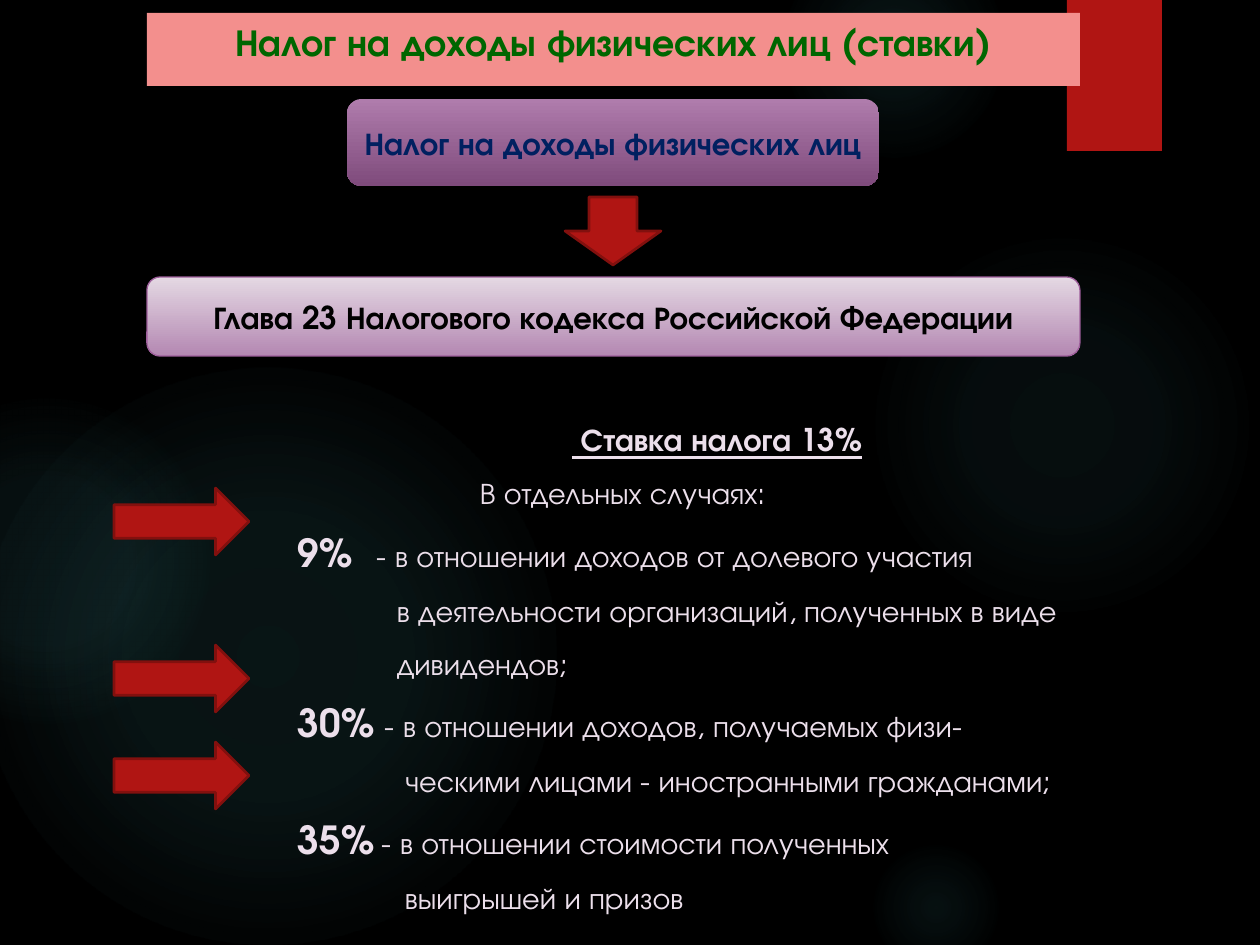
"""Build the slide on personal income tax rates."""
from dataclasses import dataclass
from typing import Optional

import lxml.etree
import pptx
import pptx.dml.color
import pptx.enum.shapes
import pptx.enum.text
import pptx.oxml.ns
import pptx.util

RGB = pptx.dml.color.RGBColor
SHAPE = pptx.enum.shapes.MSO_SHAPE
ANCHOR = pptx.enum.text.MSO_ANCHOR
qn = pptx.oxml.ns.qn

FONT = "TeX Gyre Adventor"
BLACK = RGB(0x00, 0x00, 0x00)
RED = RGB(0xB0, 0x15, 0x13)
DARK_RED = RGB(0x82, 0x10, 0x0E)
PINK = RGB(0xF3, 0x8F, 0x8D)
GREEN = RGB(0x00, 0x66, 0x00)
NAVY = RGB(0x00, 0x20, 0x60)
TEAL = RGB(0x50, 0xB9, 0xC1)
PALE = RGB(0xEC, 0xDF, 0xEB)
PLUM = RGB(0x9E, 0x5E, 0x9B)
TAX_GRADIENT = (RGB(0xAF, 0x7C, 0xAC), RGB(0x7F, 0x4B, 0x7C))
CODE_GRADIENT = (RGB(0xE4, 0xD8, 0xE3), RGB(0xB4, 0x88, 0xB2))


@dataclass
class Box:
    left: int
    top: int
    width: int
    height: int


@dataclass
class Glow:
    left: int
    top: int
    size: int
    stops: tuple


@dataclass
class Line:
    text: str
    margin: int = 0
    rate: str = ""
    tab: Optional[int] = None


GLOWS = (
    Glow(868, 231, 388, ((0, 7), (36, 6), (69, 0))),
    Glow(784, -63, 220, ((0, 14), (36, 7), (73, 0))),
    Glow(868, 840, 136, ((0, 9), (36, 5), (66, 0))),
    Glow(-21, 368, 577, ((0, 11), (36, 10), (75, 0))),
    Glow(-116, 399, 325, ((0, 8), (36, 8), (72, 0))),
)
LINES = (
    Line("В отдельных случаях:", 182),
    Line("- в отношении доходов от долевого участия", rate="9%", tab=79),
    Line("в деятельности организаций, полученных в виде", 99),
    Line("дивидендов;", 99),
    Line("- в отношении доходов, получаемых физи-", rate="30%", tab=87),
    Line("ческими лицами - иностранными гражданами;", 107),
    Line("- в отношении стоимости полученных", rate="35%", tab=84),
    Line("выигрышей и призов", 107),
)
ARROW_TOPS = (488, 645, 742)


def px(length: int) -> pptx.util.Emu:
    """Turn px into EMU."""
    return pptx.util.Emu(round(length * 914400 / 126))


def add_shape(page, kind, box: Box, fill: Optional[RGB] = None,
              line: Optional[RGB] = None, weight: float = 1.5):
    """Add a preset shape without a shadow."""
    shape = page.shapes.add_shape(
        kind, px(box.left), px(box.top), px(box.width), px(box.height))
    shape.shadow.inherit = False
    if fill is not None:
        shape.fill.solid()
        shape.fill.fore_color.rgb = fill
    if line is None:
        shape.line.fill.background()
    else:
        shape.line.color.rgb = line
        shape.line.width = pptx.util.Pt(weight)
    return shape


def add_glow(page, glow: Glow) -> None:
    """Add a circle that fades out from its centre."""
    shape = add_shape(page, SHAPE.OVAL, Box(glow.left, glow.top, glow.size, glow.size))
    gradient = lxml.etree.Element(qn("a:gradFill"), rotWithShape="1")
    stop_list = lxml.etree.SubElement(gradient, qn("a:gsLst"))
    for position, opacity in glow.stops:
        stop = lxml.etree.SubElement(stop_list, qn("a:gs"), pos=str(position * 1000))
        color = lxml.etree.SubElement(stop, qn("a:srgbClr"), val=str(TEAL))
        lxml.etree.SubElement(color, qn("a:alpha"), val=str(opacity * 1000))
    circle = lxml.etree.SubElement(gradient, qn("a:path"), path="circle")
    lxml.etree.SubElement(circle, qn("a:fillToRect"), l="50000", t="50000", r="50000", b="50000")
    shape.element.spPr.find(qn("a:prstGeom")).addnext(gradient)


def fill_gradient(shape, colors: tuple) -> None:
    """Fill a shape from its top colour to its bottom colour."""
    shape.fill.gradient()
    shape.fill.gradient_angle = 270
    for stop, color in zip(shape.fill.gradient_stops, colors):
        stop.color.rgb = color


def set_font(font, size: float, color: RGB, bold: bool = False) -> None:
    """Set typeface, size, colour and weight."""
    font.name = FONT
    font.size = pptx.util.Pt(size)
    font.color.rgb = color
    font.bold = bold


def set_label(shape, text: str, size: float, color: RGB, anchor=ANCHOR.MIDDLE) -> None:
    """Write a centred bold label into a shape."""
    shape.text_frame.word_wrap = True
    shape.text_frame.vertical_anchor = anchor
    para = shape.text_frame.paragraphs[0]
    para.text = text
    para.alignment = pptx.enum.text.PP_ALIGN.CENTER
    set_font(para.font, size, color, bold=True)


def write_line(para, line: Line) -> None:
    """Write one line, with its rate before a tab if it has one."""
    para.space_before = pptx.util.Pt(10)
    set_font(para.font, 17, PALE)
    properties = para._p.get_or_add_pPr()
    properties.set("marL", str(px(line.margin)))
    if line.rate:
        tabs = lxml.etree.Element(qn("a:tabLst"))
        lxml.etree.SubElement(tabs, qn("a:tab"), pos=str(px(line.tab)), algn="l")
        properties.find(qn("a:defRPr")).addprevious(tabs)
        span = para.add_run()
        span.text = line.rate
        set_font(span.font, 22.1, PALE, bold=True)
    span = para.add_run()
    span.text = "\t" + line.text if line.rate else line.text
    set_font(span.font, 17, PALE)


def add_rates(page, box: Box) -> None:
    """Add the heading and the list of tax rates."""
    frame = page.shapes.add_textbox(
        px(box.left), px(box.top), px(box.width), px(box.height)).text_frame
    frame.word_wrap = True
    frame.margin_left = frame.margin_right = frame.margin_top = frame.margin_bottom = 0
    heading = frame.paragraphs[0]
    heading.text = " Ставка налога 13%"
    set_font(heading.font, 17.9, PALE, bold=True)
    heading.font.underline = True
    heading._p.get_or_add_pPr().set("marL", str(px(274)))
    for line in LINES:
        write_line(frame.add_paragraph(), line)


def main() -> None:
    """Build and save the deck."""
    deck = pptx.Presentation()
    deck.slide_width, deck.slide_height = px(1260), px(945)
    page = deck.slides.add_slide(deck.slide_layouts[6])
    page.background.fill.solid()
    page.background.fill.fore_color.rgb = BLACK
    for glow in GLOWS:
        add_glow(page, glow)
    add_shape(page, SHAPE.RECTANGLE, Box(1067, 0, 95, 151), RED)

    title = add_shape(page, SHAPE.RECTANGLE, Box(147, 13, 933, 73), PINK)
    set_label(title, "Налог на доходы физических лиц (ставки)", 21.6, GREEN, ANCHOR.TOP)
    add_rates(page, Box(298, 420, 880, 500))
    tax = add_shape(page, SHAPE.ROUNDED_RECTANGLE, Box(347, 99, 532, 87))
    fill_gradient(tax, TAX_GRADIENT)
    set_label(tax, "Налог на доходы физических лиц", 18, NAVY)
    add_shape(page, SHAPE.DOWN_ARROW, Box(565, 197, 96, 68), RED, DARK_RED)
    code = add_shape(page, SHAPE.ROUNDED_RECTANGLE, Box(147, 277, 933, 79), line=PLUM, weight=0.75)
    fill_gradient(code, CODE_GRADIENT)
    set_label(code, "Глава 23 Налогового кодекса Российской Федерации", 18, BLACK)
    for top in ARROW_TOPS:
        add_shape(page, SHAPE.RIGHT_ARROW, Box(114, top, 135, 67), RED, DARK_RED)
    deck.save("out.pptx")


if __name__ == "__main__":
    main()
